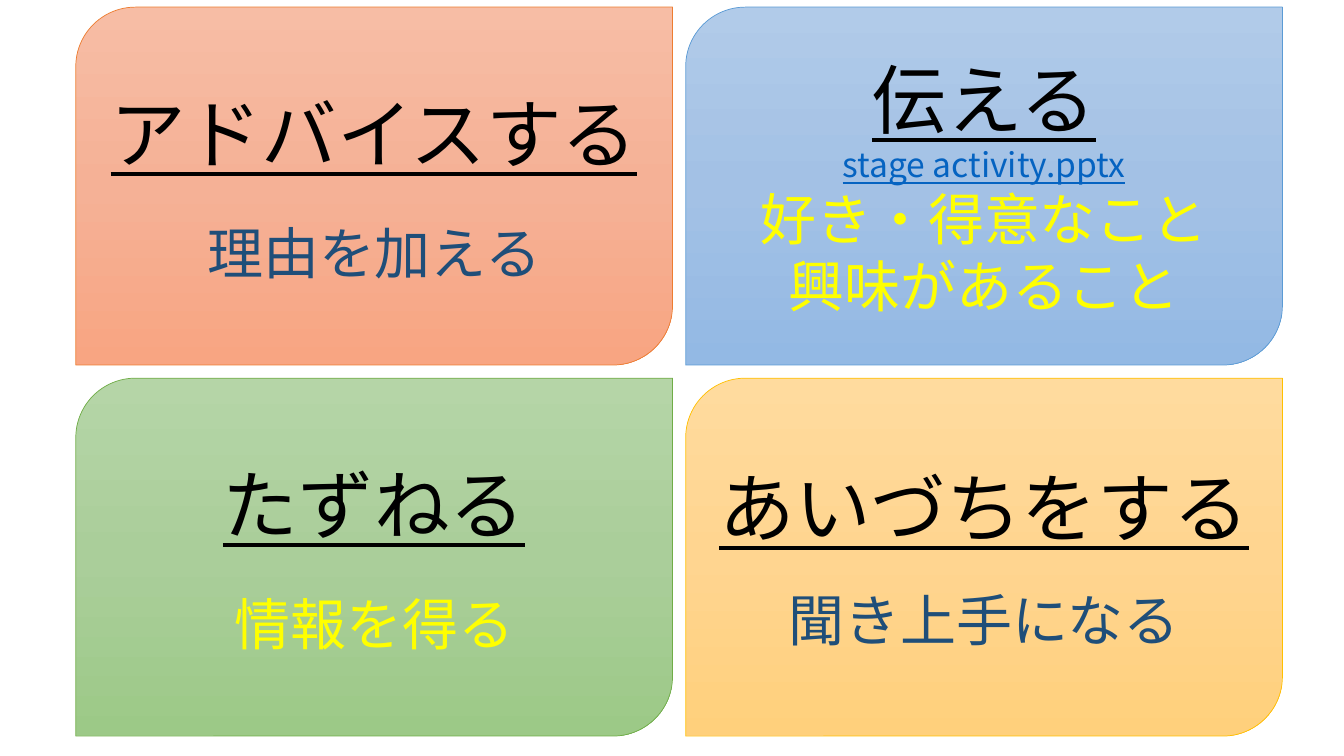
from dataclasses import dataclass
from copy import deepcopy

from lxml.etree import SubElement
from pptx import Presentation
from pptx.dml.color import RGBColor
from pptx.enum.shapes import MSO_SHAPE as Preset
from pptx.enum.text import MSO_ANCHOR as Anchor, PP_ALIGN as Align
from pptx.oxml.ns import qn
from pptx.util import Cm, Pt


@dataclass(frozen=True)
class Theme:
    font: str = "Noto Sans CJK JP"
    black: str = "000000"
    navy: str = "1F4E79"
    yellow: str = "FFFF00"
    blue: str = "0563C1"
    title_size: int = 54
    body_size: int = 40
    file_size: int = 24
    # Each card: three gradient colours, then the outline
    orange_card: tuple = ("F7BDA5", "F5B196", "F8A582", "ED7D31")
    blue_card: tuple = ("B1CBE9", "A3C1E5", "93B9E4", "5B9BD5")
    green_card: tuple = ("B5D5A7", "AACE9A", "9CC987", "70AD47")
    gold_card: tuple = ("FFDB9E", "FFD590", "FFD07C", "FFC000")


THEME = Theme()

# Card grid
LEFT, TOP = Cm(1.91), Cm(0.18)
WIDTH, HEIGHT = Cm(15.04), Cm(9.02)
STEP_X, STEP_Y = Cm(15.37), Cm(9.35)


def apply_format(target, values):
    for name, value in values.items():
        setattr(target, name, value)


def title(text):
    return text, THEME.title_size, THEME.black, True, 0


def file_name(text):
    return text, THEME.file_size, THEME.blue, True, 0


def body(text, color, gap=0):
    return text, THEME.body_size, color, False, gap


def fill_gradient(shape, colors):
    """Fill from top to bottom with evenly spaced colours."""
    fill = shape.fill
    fill.gradient()
    fill.gradient_angle = 270
    stop_list = shape._element.spPr.find(".//" + qn("a:gsLst"))
    while len(stop_list) < len(colors):
        stop_list.append(deepcopy(stop_list[0]))
    for index, (stop, color) in enumerate(zip(fill.gradient_stops, colors)):
        stop.position = index / (len(colors) - 1)
        stop.color.rgb = RGBColor.from_string(color)


def write_line(para, text, size, color, underline, gap):
    apply_format(para, {"alignment": Align.CENTER, "space_before": Pt(gap)})
    span = para.add_run()
    span.text = text
    apply_format(span.font, {"name": THEME.font, "size": Pt(size),
                             "underline": underline})
    span.font.color.rgb = RGBColor.from_string(color)
    # Japanese glyphs use the East Asian typeface
    SubElement(span.font._element, qn("a:ea"), typeface=THEME.font)


def add_card(page, row, column, colors, lines):
    box = page.shapes.add_shape(
        Preset.ROUND_2_DIAG_RECTANGLE,
        LEFT + column * STEP_X, TOP + row * STEP_Y, WIDTH, HEIGHT)
    box.shadow.inherit = False
    *shades, outline = colors
    fill_gradient(box, shades)
    box.line.color.rgb = RGBColor.from_string(outline)
    box.line.width = Pt(0.5)

    frame = box.text_frame
    apply_format(frame, {"word_wrap": True, "vertical_anchor": Anchor.MIDDLE})
    for index, line in enumerate(lines):
        para = frame.add_paragraph() if index else frame.paragraphs[0]
        write_line(para, *line)


def main():
    deck = Presentation()
    apply_format(deck, {"slide_width": Cm(33.87), "slide_height": Cm(19.05)})
    page = deck.slides.add_slide(deck.slide_layouts[6])

    # Top row
    add_card(page, 0, 0, THEME.orange_card, [
        title("アドバイスする"), body("理由を加える", THEME.navy, gap=29)])
    add_card(page, 0, 1, THEME.blue_card, [
        title("伝える"), file_name("stage activity.pptx"),
        body("好き・得意なこと", THEME.yellow),
        body("興味があること", THEME.yellow)])

    # Bottom row
    add_card(page, 1, 0, THEME.green_card, [
        title("たずねる"), body("情報を得る", THEME.yellow, gap=29)])
    add_card(page, 1, 1, THEME.gold_card, [
        title("あいづちをする"), body("聞き上手になる", THEME.navy, gap=24)])

    deck.save("out.pptx")


if __name__ == "__main__":
    main()
